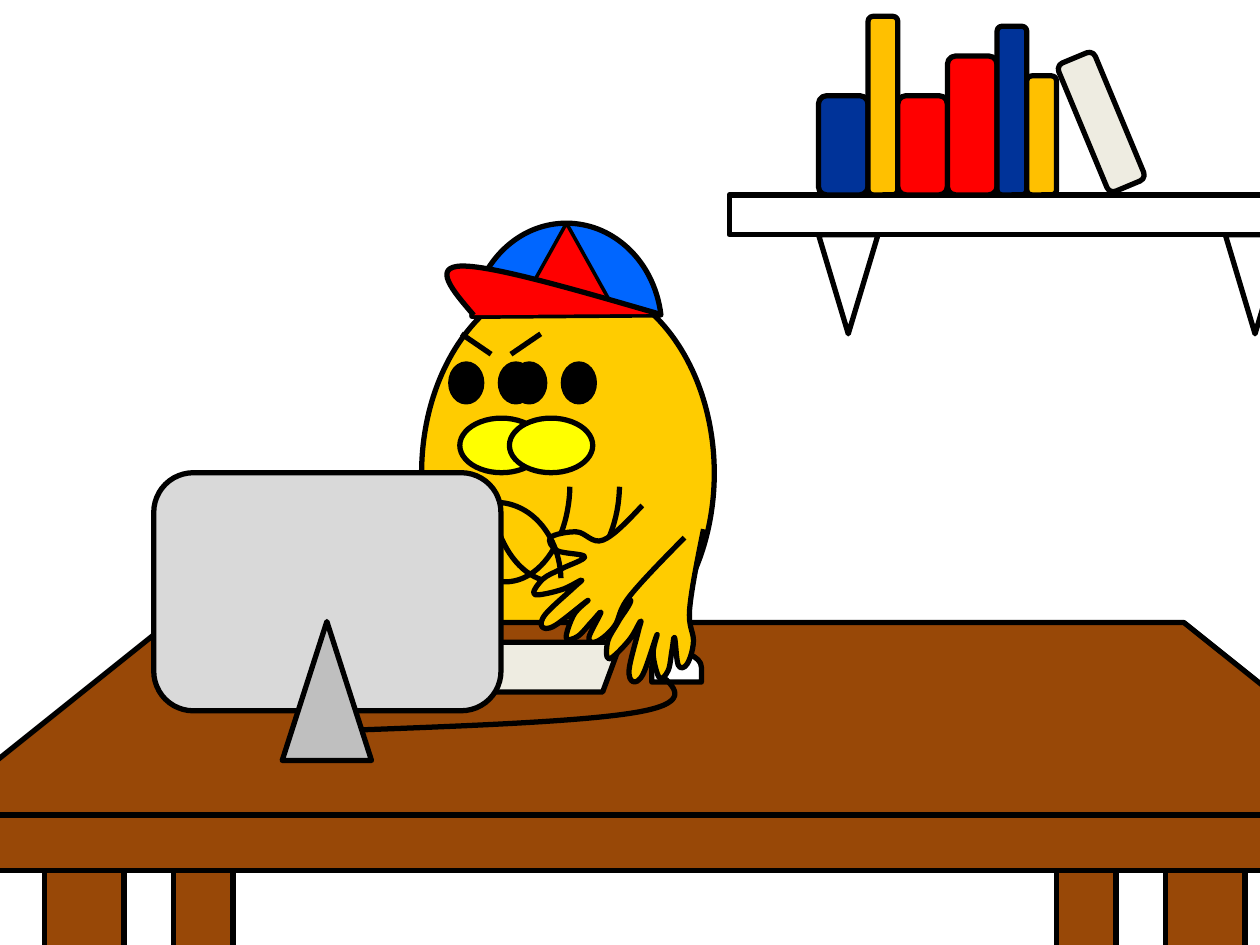
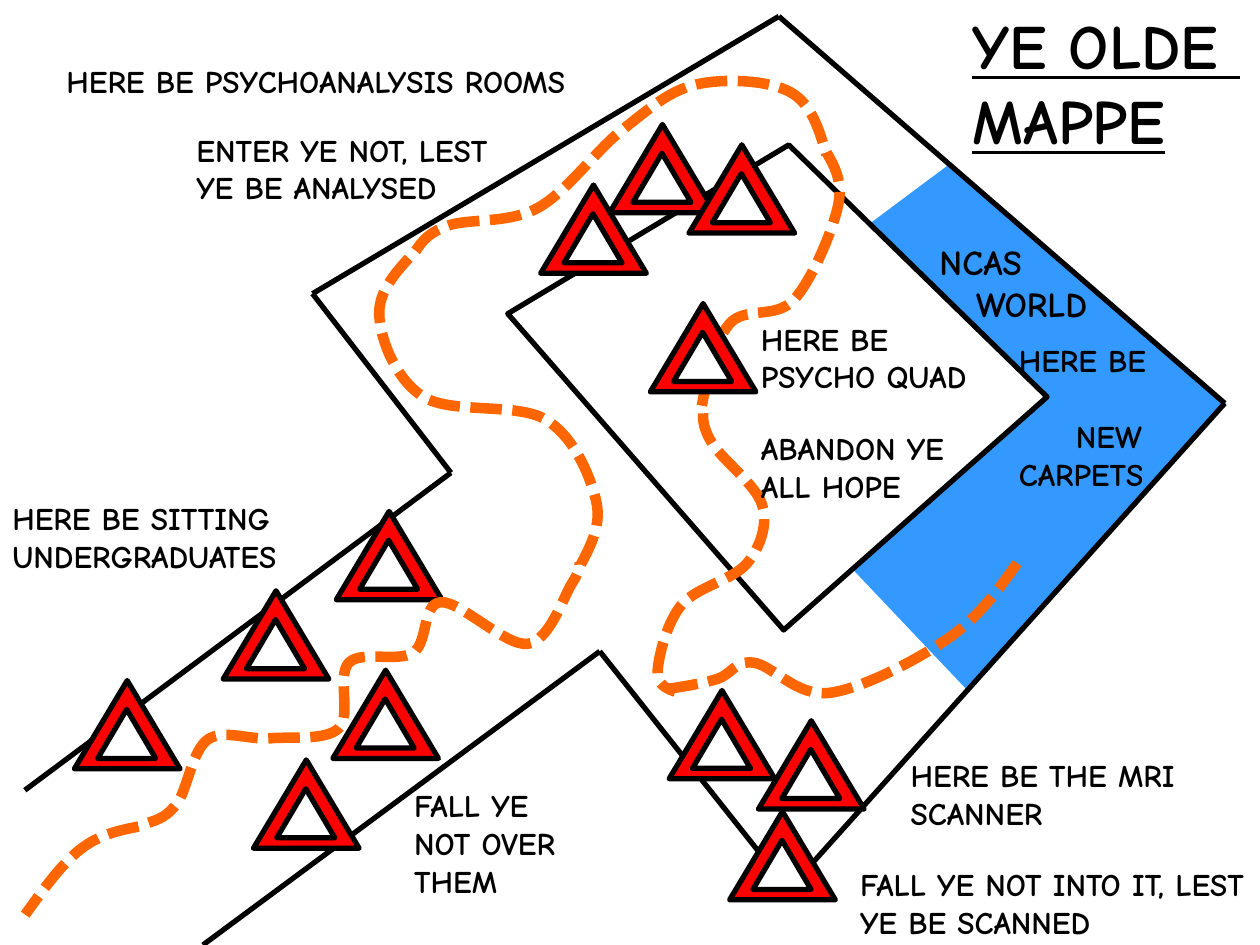
from itertools import pairwise
from math import cos, radians, sin

from lxml.etree import SubElement
from pptx import Presentation
from pptx.dml.color import RGBColor
from pptx.enum.dml import MSO_LINE
from pptx.enum.shapes import MSO_CONNECTOR, MSO_SHAPE
from pptx.enum.text import MSO_ANCHOR, MSO_AUTO_SIZE, PP_ALIGN
from pptx.oxml.ns import qn
from pptx.util import Cm, Pt

BLACK = RGBColor.from_string("000000")
WHITE = RGBColor.from_string("FFFFFF")
WOOD = RGBColor.from_string("984807")
CREAM = RGBColor.from_string("EEECE1")
GOLD = RGBColor.from_string("FFC000")
NAVY = RGBColor.from_string("003399")
RED = RGBColor.from_string("FF0000")
FEATHER = RGBColor.from_string("FFCC00")
YELLOW = RGBColor.from_string("FFFF00")
CAP_BLUE = RGBColor.from_string("0066FF")
SCREEN_GREY = RGBColor.from_string("D9D9D9")
STAND_GREY = RGBColor.from_string("BFBFBF")
CARPET_BLUE = RGBColor.from_string("3399FF")
TRAIL_ORANGE = RGBColor.from_string("FF6600")

FONT = "Comic Neue"
OUTLINE = 3
GRID = Cm(1) * 0.0254  # one step of the outline points

SMILE = (1.67, 104.27)
HAND_TILT = 18.8  # degrees by which the HAND points lean
HAND = [
    (0, -58), (-11, -18), (-32, -12), (-47, 3), (-37, 9), (-16, 1), (-26, 19),
    (-34, 34), (-33, 48), (-17, 33), (-8, 18), (-10, 27), (-17, 56), (-14, 66),
    (-6, 60), (5, 29), (2, 44), (7, 63), (14, 57), (17, 41), (19, 31),
    (22, 53), (29, 52), (34, 34), (31, 8), (42, -55),
]
VISOR = [(2, 73), (-7, 34), (149, 72)]
CABLE = [(-4, 23), (-17, 55), (-253, 70)]

WALL = [(0.5, 15.93), (9.09, 9.53), (6.3, 5.92), (15.7, 0.33),
        (24.69, 8.13), (15.9, 17.93), (12.09, 13.13), (4.09, 19.05)]
CARPET = [(754, 130), (691, 177), (829, 315), (676, 451), (768, 548), (973, 320)]
COURTYARD = [(403, 249), (622, 500), (831, 315), (626, 115)]
TRAILS = [
    [(118, 653), (141, 637), (165, 587), (215, 586), (269, 578), (277, 526),
     (328, 518), (350, 478), (419, 511), (454, 463), (460, 446)],
    [(110, 656), (64, 674), (20, 726)],
    [(461, 448), (473, 397), (433, 333), (336, 315), (301, 250), (331, 198)],
    [(330, 199), (356, 179), (427, 165), (494, 103), (553, 67), (627, 73), (656, 123)],
    [(656, 121), (665, 164), (630, 238), (579, 257), (557, 322)],
    [(558, 328), (566, 353), (605, 401), (593, 447), (541, 480), (522, 532), (536, 549)],
    [(529, 547), (569, 539), (598, 526), (658, 550), (752, 507), (808, 446)],
]
WARNINGS = [(6.71, 13.51), (4.5, 11.91), (5.11, 15.32), (1.5, 13.72), (6.78, 10.31),
            (10.9, 3.73), (12.29, 2.51), (13.89, 2.92),
            (13.49, 13.92), (15.29, 14.53), (14.71, 16.36)]
QUAD_WARNING = (13.11, 6.12)
LABELS = [
    ("HERE BE SITTING UNDERGRADUATES", 0, 9.93, 6.86),
    ("FALL YE NOT OVER THEM", 8.1, 15.72, 3.99),
    ("HERE BE PSYCHOANALYSIS ROOMS", 1.09, 1.12, 12.8),
    ("ENTER YE NOT, LEST YE BE ANALYSED", 3.71, 2.51, 6.86),
    ("HERE BE THE MRI SCANNER", 18.11, 15.11, 6.86),
    ("FALL YE NOT INTO IT, LEST YE BE SCANNED", 17.09, 17.32, 8.31),
    ("HERE BE PSYCHO QUAD", 15.09, 6.32, 5),
    ("ABANDON YE ALL HOPE", 15.09, 8.53, 4.8),
]


def paint(shape, fill=None, line=BLACK, width=OUTLINE):
    shape.shadow.inherit = False
    if fill is None:
        shape.fill.background()
    else:
        shape.fill.solid()
        shape.fill.fore_color.rgb = fill
    if line is None:
        shape.line.fill.background()
    else:
        shape.line.color.rgb = line
        shape.line.width = Pt(width)
    return shape


def add_preset(slide, kind, left, top, width, height, fill=None, line_width=OUTLINE,
               rotation=0, adjustments=()):
    shape = slide.shapes.add_shape(kind, Cm(left), Cm(top), Cm(width), Cm(height))
    shape.rotation = rotation
    for index, value in enumerate(adjustments):
        shape.adjustments[index] = value
    return paint(shape, fill, width=line_width)


def add_outline(slide, points, left=0, top=0, close=False):
    """Outline through grid points counted from left and top."""
    start, *others = [(x * GRID, y * GRID) for x, y in points]
    builder = slide.shapes.build_freeform(*start)
    builder.add_line_segments(others, close=close)
    return builder.convert_to_shape(Cm(left), Cm(top))


def middle(first, second):
    return (first[0] + second[0]) / 2, (first[1] + second[1]) / 2


def smooth(knots):
    """Put two Bezier handles between neighbouring knots."""
    before, after = {}, {}
    for index in range(1, len(knots) - 1):
        (x0, y0), (x, y), (x1, y1) = knots[index - 1:index + 2]
        step_x, step_y = (x1 - x0) / 6, (y1 - y0) / 6
        before[index] = (x - step_x, y - step_y)
        after[index] = (x + step_x, y + step_y)
    last = len(knots) - 1
    after[0] = middle(knots[0], before[1])
    before[last] = middle(knots[last], after[last - 1])
    points = [knots[0]]
    for index in range(last):
        points += [after[index], before[index + 1], knots[index + 1]]
    return points


def add_curve(slide, knots, left=0, top=0):
    """Smooth open curve: every three segments become one Bezier segment."""
    shape = add_outline(slide, smooth(knots), left, top)
    segments = list(shape.element.iter(qn("a:lnTo")))
    for first, *rest in zip(segments[::3], segments[1::3], segments[2::3]):
        first.tag = qn("a:cubicBezTo")
        for segment in rest:
            first.append(segment[0])
            segment.getparent().remove(segment)
    return shape


def add_line(slide, start, end):
    line = slide.shapes.add_connector(
        MSO_CONNECTOR.STRAIGHT, *(Cm(value) for value in (*start, *end)))
    line.line.color.rgb = BLACK
    line.line.width = Pt(OUTLINE)
    SubElement(line.element.spPr, qn("a:effectLst"))


def add_shelf(slide, left, top):
    add_preset(slide, MSO_SHAPE.RECTANGLE, left, top, 12.8, 0.8)
    for offset in (1.8, 10):
        add_preset(slide, MSO_SHAPE.ISOSCELES_TRIANGLE, left + offset, top + 0.8, 1.2, 2,
                   rotation=180)
    add_preset(slide, MSO_SHAPE.ROUNDED_RECTANGLE, left + 7.1, top - 2.87, 0.8, 2.8, CREAM,
               rotation=337.4)
    book_left = left + 1.8
    for width, height, colour in ((1, 2, NAVY), (0.6, 3.6, GOLD), (1, 2, RED),
                                  (1, 2.8, RED), (0.6, 3.4, NAVY), (0.6, 2.4, GOLD)):
        add_preset(slide, MSO_SHAPE.ROUNDED_RECTANGLE, book_left, top - height,
                   width, height, colour)
        book_left += width


def add_face(slide, left, top):
    for offset in (1.27, 0):
        add_preset(slide, MSO_SHAPE.OVAL, left + offset, top, 0.66, 0.8, BLACK, 2)
    add_preset(slide, MSO_SHAPE.OVAL, left + 0.2, top + 1.11, 1.68, 1.1, YELLOW)
    add_preset(slide, MSO_SHAPE.ARC, left - 0.18, top + 0.45, 2.6, 3.96, adjustments=SMILE)


def add_cap(slide, left, top):
    add_preset(slide, MSO_SHAPE.CHORD, left, top, 3.84, 4.24, CAP_BLUE,
               adjustments=(112.33, 211.15))
    add_preset(slide, MSO_SHAPE.ISOSCELES_TRIANGLE, left + 0.89, top, 2.06, 1.85, RED, 2)
    paint(add_curve(slide, VISOR, left, top), RED)


def add_bird(slide, left, top):
    add_preset(slide, MSO_SHAPE.OVAL, left, top, 5.9, 7.88, FEATHER)
    for offset in (0.57, 1.57):
        add_face(slide, left + offset, top + 1.72)
    add_cap(slide, left + 1, top - 1.1)
    brow_top, brow_bottom = top + 1.13, top + 1.54
    add_line(slide, (left + 0.8, brow_top), (left + 1.4, brow_bottom))
    add_line(slide, (left + 1.8, brow_bottom), (left + 2.4, brow_top))


def add_hand(slide, left, top, rotation):
    """Hand centred on left, top."""
    cosine, sine = cos(radians(HAND_TILT)), sin(radians(HAND_TILT))
    upright = [(x * cosine + y * sine, y * cosine - x * sine) for x, y in HAND]
    hand = paint(add_curve(slide, upright, left, top), FEATHER)
    hand.rotation = rotation


def add_legs(slide, top):
    for left, width in ((0.9, 1.6), (23.5, 1.6), (21.3, 1.2), (3.5, 1.2)):
        add_preset(slide, MSO_SHAPE.RECTANGLE, left, top, width, 2.6, WOOD)


def add_desk(slide, left, top):
    add_preset(slide, MSO_SHAPE.TRAPEZOID, left, top, 30.18, 3.89, WOOD, adjustments=(1.25,))
    add_preset(slide, MSO_SHAPE.RECTANGLE, left, top + 3.88, 29.9, 1.12, WOOD)
    add_preset(slide, MSO_SHAPE.PARALLELOGRAM, left + 8.77, top + 0.4, 5.2, 1, CREAM,
               adjustments=(0.37,))
    mouse_left, mouse_top = left + 14.79, top + 0.4
    add_preset(slide, MSO_SHAPE.FLOWCHART_DELAY, mouse_left, mouse_top, 0.6, 1, WHITE,
               rotation=270)
    paint(add_curve(slide, CABLE, mouse_left, mouse_top))


def add_monitor(slide, left, top):
    add_preset(slide, MSO_SHAPE.ROUNDED_RECTANGLE, left, top, 7, 4.8, SCREEN_GREY)
    add_preset(slide, MSO_SHAPE.ISOSCELES_TRIANGLE, left + 2.59, top + 3, 1.8, 2.8, STAND_GREY)


def build_desk_scene(slide):
    add_legs(slide, 16.9)
    add_shelf(slide, 14.7, 3.93)
    add_bird(slide, 8.5, 5.6)
    add_desk(slide, -1.45, 12.55)
    add_hand(slide, 13.11, 12.07, HAND_TILT)
    add_hand(slide, 12.12, 11.43, 52)
    add_preset(slide, MSO_SHAPE.ARC, 8.71, 10.13, 2.6, 3.18,
               adjustments=[216 - angle for angle in reversed(SMILE)])
    add_monitor(slide, 3.1, 9.53)


def add_warning(slide, left, top):
    add_preset(slide, MSO_SHAPE.ISOSCELES_TRIANGLE, left, top, 2.13, 1.78, RED)
    add_preset(slide, MSO_SHAPE.ISOSCELES_TRIANGLE, left + 0.47, top + 0.58, 1.17, 0.99, WHITE)


def format_text(text_frame, size, underline=None):
    for paragraph in text_frame.paragraphs:
        for run in paragraph.runs:
            run.font.name = FONT
            run.font.size = Pt(size)
            run.font.bold = True
            run.font.underline = underline
            run.font.color.rgb = BLACK


def add_label(slide, text, left, top, width, size=18):
    box = slide.shapes.add_textbox(Cm(left), Cm(top), Cm(width), Cm(1.8))
    box.text_frame.word_wrap = True
    box.text_frame.auto_size = MSO_AUTO_SIZE.SHAPE_TO_FIT_TEXT
    box.text_frame.text = text
    format_text(box.text_frame, size)
    return box.text_frame.paragraphs


def indent(paragraph, margin, first_line):
    properties = paragraph._p.get_or_add_pPr()
    properties.set("marL", str(Cm(margin)))
    properties.set("indent", str(Cm(first_line)))


def set_title(slide, text, left, top, width, height):
    title = slide.shapes.title
    title.left, title.top, title.width, title.height = map(Cm, (left, top, width, height))
    title.fill.solid()
    title.fill.fore_color.rgb = WHITE
    frame = title.text_frame
    frame.text = text
    frame.word_wrap = False
    frame.auto_size = MSO_AUTO_SIZE.NONE
    frame.vertical_anchor = MSO_ANCHOR.TOP
    for paragraph in frame.paragraphs:
        paragraph.alignment = PP_ALIGN.LEFT
    format_text(frame, 36, underline=True)


def build_map(slide):
    set_title(slide, "YE OLDE \nMAPPE", 19.35, 0, 6.05, 3.33)
    paint(add_outline(slide, CARPET, close=True), CARPET_BLUE, line=None)
    paint(add_outline(slide, COURTYARD, close=True))
    for start, end in pairwise(WALL):
        add_line(slide, start, end)
    for left, top in WARNINGS:
        add_warning(slide, left, top)
    for knots in TRAILS:
        trail = paint(add_curve(slide, knots), line=TRAIL_ORANGE, width=6)
        trail.line.dash_style = MSO_LINE.SQUARE_DOT
    add_warning(slide, *QUAD_WARNING)
    for label in LABELS:
        add_label(slide, *label)
    world = add_label(slide, "NCAS\nWORLD", 18.69, 4.72, 3.99, size=20)[1]
    indent(world, 0.74, 0)
    carpets = add_label(slide, "HERE BE\nNEW CARPETS", 20.29, 6.76, 3.61)[1]
    indent(carpets, 0, 1.15)
    carpets.space_before = Pt(21.5)


def main():
    presentation = Presentation()
    presentation.slide_width, presentation.slide_height = Cm(25.4), Cm(19.05)
    title_only, blank = presentation.slide_layouts[5], presentation.slide_layouts[6]
    build_desk_scene(presentation.slides.add_slide(blank))
    build_map(presentation.slides.add_slide(title_only))
    presentation.save("out.pptx")


if __name__ == "__main__":
    main()
